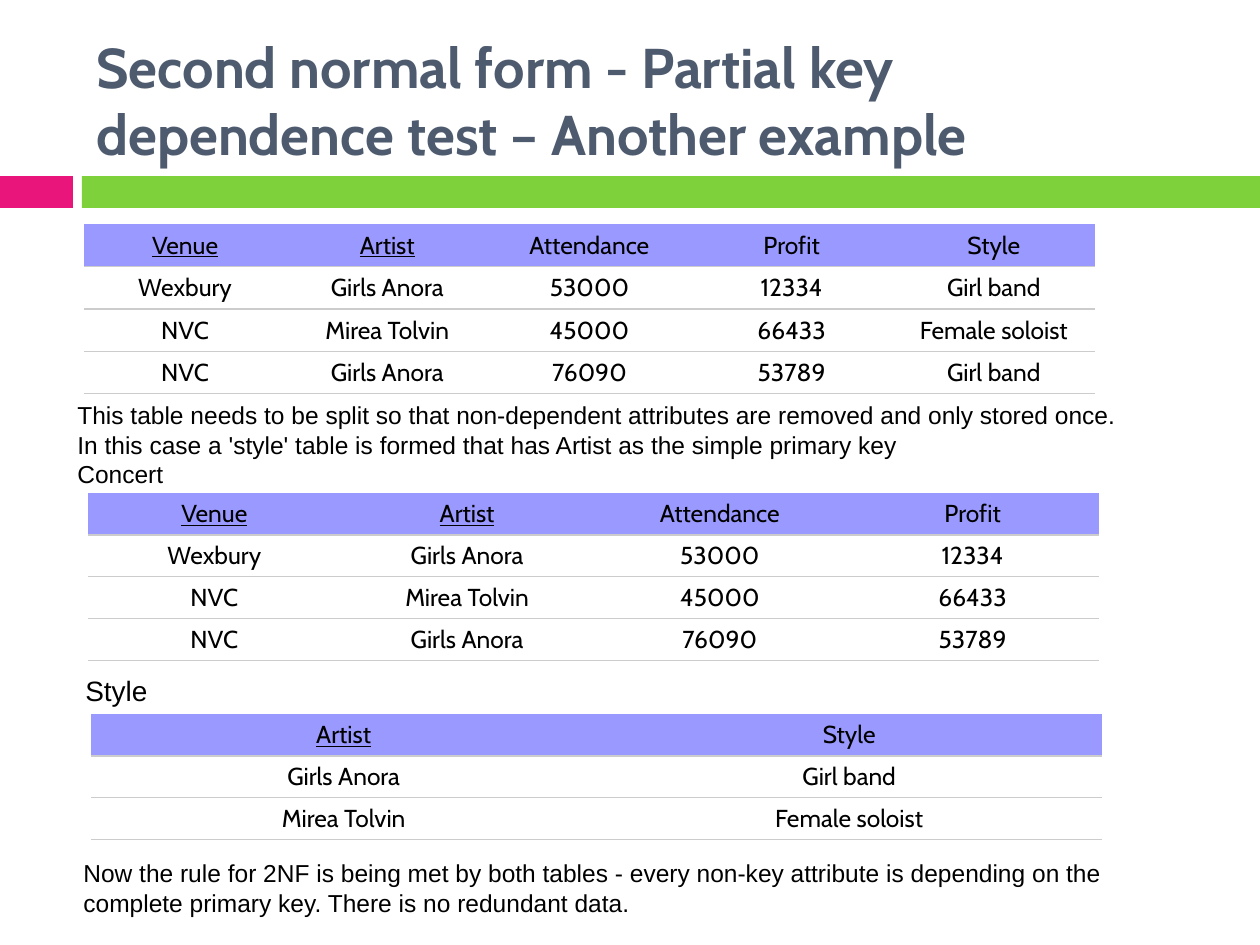
from dataclasses import dataclass

from lxml import etree
from pptx import Presentation
from pptx.dml.color import RGBColor
from pptx.enum.shapes import MSO_SHAPE
from pptx.enum.text import MSO_ANCHOR, PP_ALIGN
from pptx.oxml.ns import qn
from pptx.util import Emu, Pt

RECTANGLE = MSO_SHAPE.RECTANGLE
MIDDLE, TOP = MSO_ANCHOR.MIDDLE, MSO_ANCHOR.TOP
CENTER = PP_ALIGN.CENTER

PINK = RGBColor(0xEA, 0x15, 0x7A)
GREEN = RGBColor(0x7F, 0xD1, 0x3B)
SLATE = RGBColor(0x4E, 0x5B, 0x6F)
LAVENDER = RGBColor(0x99, 0x99, 0xFF)
RULE_GREY = RGBColor(0xCC, 0xCC, 0xCC)
BLACK = RGBColor(0, 0, 0)

PX_PER_INCH = 126
TABLE_WIDTH = 1011
RULE_WIDTH = Pt(0.75)


def px(length: int) -> Emu:
    return Emu(round(length * 914400 / PX_PER_INCH))


@dataclass(frozen=True)
class Box:
    left: int
    top: int
    width: int
    height: int

    def emu(self) -> tuple[Emu, Emu, Emu, Emu]:
        return px(self.left), px(self.top), px(self.width), px(self.height)


@dataclass(frozen=True)
class Bar:
    box: Box
    color: RGBColor


@dataclass(frozen=True)
class Caption:
    box: Box
    lines: tuple[str, ...]
    size: int = 14
    font: str = "Arial"
    color: RGBColor = BLACK
    bold: bool = False
    anchor: MSO_ANCHOR = TOP
    wrap: bool = True


@dataclass(frozen=True)
class Relation:
    left: int
    top: int
    height: int
    keys: tuple[str, ...]
    rows: tuple[tuple[str, ...], ...]


BARS = (
    Bar(Box(0, 176, 73, 32), PINK),
    Bar(Box(82, 176, 1178, 32), GREEN),
)

CAPTIONS = (
    Caption(
        Box(84, 32, 1124, 136),
        ("Second normal form - Partial key dependence test – Another example",),
        size=32, font="Cabin", color=SLATE, bold=True, anchor=MIDDLE,
    ),
    Caption(
        Box(65, 394, 1097, 102),
        (
            "This table needs to be split so that non-dependent attributes are removed and only stored once.",
            "In this case a 'style' table is formed that has Artist as the simple primary key",
            "Concert",
        ),
    ),
    Caption(Box(73, 667, 88, 47), ("Style",), size=16, wrap=False),
    Caption(
        Box(71, 852, 1046, 72),
        (
            "Now the rule for 2NF is being met by both tables - every non-key attribute "
            "is depending on the complete primary key. There is no redundant data.",
        ),
    ),
)

# The two split relations are projections of the unsplit one
CONCERTS = (
    ("Venue", "Artist", "Attendance", "Profit", "Style"),
    ("Wexbury", "Girls Anora", "53000", "12334", "Girl band"),
    ("NVC", "Mirea Tolvin", "45000", "66433", "Female soloist"),
    ("NVC", "Girls Anora", "76090", "53789", "Girl band"),
)
RELATIONS = (
    Relation(84, 224, 170, ("Venue", "Artist"), CONCERTS),
    Relation(88, 493, 168, ("Venue", "Artist"), tuple(row[:4] for row in CONCERTS)),
    Relation(91, 714, 126, ("Artist",), tuple(row[1::3] for row in CONCERTS[:3])),
)


def draw_bar(slide, bar: Bar) -> None:
    rectangle = slide.shapes.add_shape(RECTANGLE, *bar.box.emu())
    rectangle.shadow.inherit = False
    rectangle.fill.solid()
    rectangle.fill.fore_color.rgb = bar.color
    rectangle.line.fill.background()


def draw_caption(slide, caption: Caption) -> None:
    frame = slide.shapes.add_textbox(*caption.box.emu()).text_frame
    frame.word_wrap = caption.wrap
    frame.vertical_anchor = caption.anchor
    frame.text = "\n".join(caption.lines)
    for paragraph in frame.paragraphs:
        font = paragraph.font
        font.name, font.size = caption.font, Pt(caption.size)
        font.bold = caption.bold
        font.color.rgb = caption.color


def draw_rules(cell, header: bool) -> None:
    """Rule the cell below, and above too unless it is a header."""
    ruled_edges = ("a:lnB",) if header else ("a:lnT", "a:lnB")
    properties = cell._tc.get_or_add_tcPr()
    for position, edge in enumerate(("a:lnL", "a:lnR", "a:lnT", "a:lnB")):
        line = etree.Element(qn(edge), w=str(RULE_WIDTH))
        if edge in ruled_edges:
            fill = etree.SubElement(line, qn("a:solidFill"))
            etree.SubElement(fill, qn("a:srgbClr"), val=str(RULE_GREY))
        else:
            etree.SubElement(line, qn("a:noFill"))
        properties.insert(position, line)


def draw_cell(cell, text: str, header: bool, key: bool) -> None:
    cell.text = text
    cell.vertical_anchor = MIDDLE
    cell.margin_top = cell.margin_bottom = px(4)
    if header:
        cell.fill.solid()
        cell.fill.fore_color.rgb = LAVENDER
    else:
        cell.fill.background()
    paragraph = cell.text_frame.paragraphs[0]
    paragraph.alignment = CENTER
    font = paragraph.font
    font.name, font.size = "Cabin", Pt(14)
    font.bold = False
    font.underline = key
    font.color.rgb = BLACK
    draw_rules(cell, header)


def draw_relation(slide, relation: Relation) -> None:
    box = Box(relation.left, relation.top, TABLE_WIDTH, relation.height)
    table = slide.shapes.add_table(
        len(relation.rows), len(relation.rows[0]), *box.emu()
    ).table
    table.first_row = table.horz_banding = False
    for row_index, row in enumerate(relation.rows):
        header = row_index == 0
        for column_index, text in enumerate(row):
            cell = table.cell(row_index, column_index)
            draw_cell(cell, text, header, header and text in relation.keys)


def main() -> None:
    presentation = Presentation()
    presentation.slide_width, presentation.slide_height = px(1260), px(945)
    slide = presentation.slides.add_slide(presentation.slide_layouts[6])

    # Divider under the title
    for bar in BARS:
        draw_bar(slide, bar)
    # Unsplit relation, then its two parts
    for relation in RELATIONS:
        draw_relation(slide, relation)
    # Title and explanations
    for caption in CAPTIONS:
        draw_caption(slide, caption)

    presentation.save("out.pptx")


if __name__ == "__main__":
    main()
